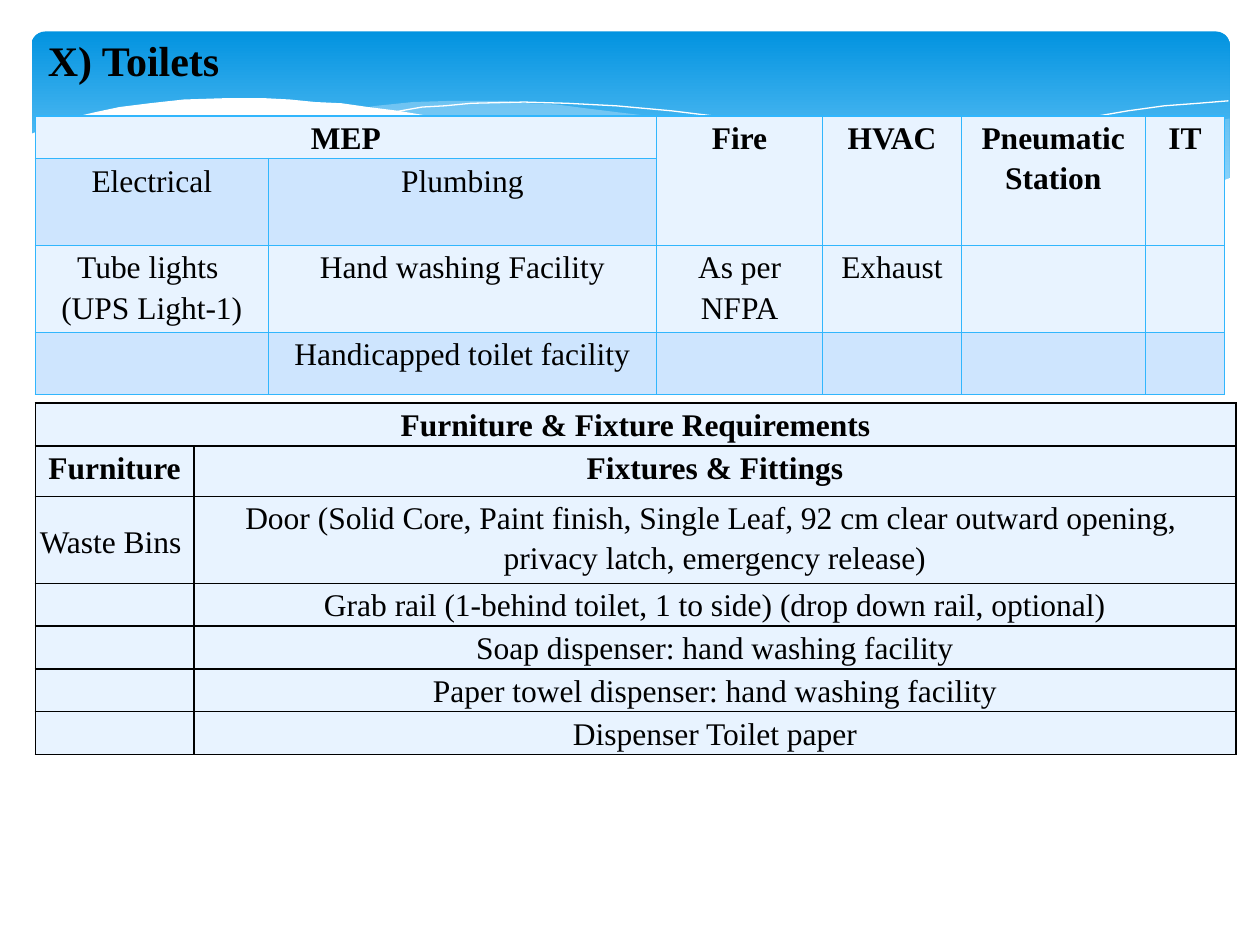
from lxml import etree
from pptx import Presentation
from pptx import util as u
from pptx.dml.color import RGBColor
from pptx.enum import shapes, text
from pptx.oxml.ns import qn

FONT = "Times New Roman"
TITLE_SIZE, TABLE_SIZE = 24, 18
PALE, SOFT, SKY = "E8F3FF", "CEE5FE", "31B6FD"
MIST, BLACK, WHITE = "C6E7FC", "000000", "FFFFFF"
BANNER_TOP, BANNER_BOTTOM = "0293E0", "83D3FE"

# Shared measures in inches
LEFT_EDGE = 0.28
CELL_MARGIN = 0.07
ONE_LINE, TWO_LINES = 0.34, 0.69

# Wave outlines as (x, y) in hundredths of an inch: the freeform builder keeps whole numbers
RIGHT_WAVE = [
    (976, 94), (948, 99), (921, 104), (891, 110), (861, 118), (805, 131), (753, 143),
    (706, 152), (661, 160), (691, 164), (732, 168), (769, 171), (803, 172), (835, 172),
    (863, 170), (897, 165), (928, 158), (949, 152), (976, 141)]
MIDDLE_WAVE = [
    (893, 167), (866, 164), (807, 154), (741, 142), (668, 126), (629, 116), (598, 109),
    (569, 102), (541, 97), (514, 92), (489, 89), (465, 86), (442, 83), (420, 82),
    (399, 80), (361, 80), (328, 81), (299, 84), (286, 86), (323, 90), (362, 97),
    (404, 106), (449, 116), (530, 135), (601, 150), (650, 158), (695, 165), (736, 169),
    (773, 172), (807, 173), (838, 172), (867, 170)]
FALLING_LINE = [
    (309, 90), (318, 88), (335, 85), (353, 84), (374, 82), (416, 81), (450, 82), (489, 84),
    (533, 88), (582, 94), (636, 103), (695, 114), (760, 128), (831, 145), (907, 166)]
RISING_LINE = [
    (613, 151), (653, 141), (695, 130), (748, 117), (806, 104), (836, 99), (866, 93),
    (895, 88), (924, 84), (951, 82), (975, 80)]
WHITE_WAVE = [
    (977, 141), (950, 151), (920, 159), (887, 166), (850, 170), (809, 171), (761, 170),
    (708, 165), (648, 156), (579, 144), (503, 128), (447, 114), (418, 107), (391, 102),
    (365, 96), (340, 92), (316, 88), (292, 85), (271, 82), (250, 81), (230, 79), (211, 78),
    (177, 78), (146, 79), (119, 82), (95, 85), (76, 89), (59, 93), (46, 98), (36, 102),
    (23, 107), (23, 224), (977, 224)]

SERVICES = [
    ["MEP", "", "Fire", "HVAC", "Pneumatic Station", "IT"],
    ["Electrical", "Plumbing", "", "", "", ""],
    ["Tube lights \n(UPS Light-1)", "Hand washing Facility", "As per NFPA", "Exhaust", "", ""],
    ["", "Handicapped toilet facility", "", "", "", ""]]
FIXTURES = [
    "Grab rail (1-behind toilet, 1 to side) (drop down rail, optional)",
    "Soap dispenser: hand washing facility",
    "Paper towel dispenser: hand washing facility",
    "Dispenser Toilet paper"]
FURNITURE = [
    ["Furniture & Fixture Requirements", ""],
    ["Furniture", "Fixtures & Fittings"],
    ["Waste Bins ", "Door (Solid Core, Paint finish, Single Leaf, 92 cm clear outward opening,"
     "  privacy latch, emergency release)"],
] + [["", fixture] for fixture in FIXTURES]


def color(code):
    return RGBColor.from_string(code)


def inches(*lengths):
    return [u.Inches(length) for length in lengths]


class Page:
    """The current slide and the style of its elements."""

    def __init__(self, deck):
        self.slide = deck.slides.add_slide(deck.slide_layouts[5])

    def format(self, para, size, bold, align):
        para.alignment = align
        for span in para.runs:
            span.font.name, span.font.size, span.font.bold = FONT, u.Pt(size), bold
            span.font.color.rgb = color(BLACK)

    def banner(self, *place):
        box = self.slide.shapes.add_shape(shapes.MSO_SHAPE.ROUNDED_RECTANGLE, *inches(*place))
        box.adjustments[0] = 0.07
        box.shadow.inherit = False
        box.line.fill.background()
        box.fill.gradient()
        box.fill.gradient_angle = 270  # counted counter-clockwise: runs from top to bottom
        stops = zip(box.fill.gradient_stops, (0, 0.9), (BANNER_TOP, BANNER_BOTTOM))
        for stop, position, code in stops:
            stop.position = position
            stop.color.rgb = color(code)

    def freeform(self, points, closed):
        builder = self.slide.shapes.build_freeform(*points[0], scale=u.Inches(0.01))
        builder.add_line_segments(points[1:], close=closed)
        outline = builder.convert_to_shape()
        outline.shadow.inherit = False
        return outline

    def wave(self, points, code, opacity):
        wave = self.freeform(points, closed=True)
        wave.line.fill.background()
        wave.fill.solid()
        wave.fill.fore_color.rgb = color(code)
        tint = wave._element.spPr.find(qn("a:solidFill")).find(qn("a:srgbClr"))
        etree.SubElement(tint, qn("a:alpha"), val=str(opacity * 1000))

    def hairline(self, points):
        curve = self.freeform(points, closed=False)
        curve.fill.background()
        curve.line.color.rgb = color(WHITE)
        curve.line.width = u.Pt(0)

    def title(self, words, *place):
        box = self.slide.shapes.title
        box.left, box.top, box.width, box.height = inches(*place)
        box.text_frame.text = words
        box.text_frame.vertical_anchor = text.MSO_ANCHOR.TOP
        self.format(box.text_frame.paragraphs[0], TITLE_SIZE, True, text.PP_ALIGN.LEFT)
        self.slide.shapes._spTree.append(box._element)  # in front of the waves

    def border(self, cell, code):
        props = cell._tc.get_or_add_tcPr()
        for index, side in enumerate(("a:lnL", "a:lnR", "a:lnT", "a:lnB")):
            line = etree.Element(qn(side), w=str(u.Pt(1)))
            fill = etree.SubElement(line, qn("a:solidFill"))
            etree.SubElement(fill, qn("a:srgbClr"), val=code)
            props.insert(index, line)  # borders come before the fill

    def cell(self, cell, words, fill, edge, bold):
        cell.margin_left = cell.margin_right = u.Inches(CELL_MARGIN)
        cell.margin_top = cell.margin_bottom = 0
        cell.fill.solid()
        cell.fill.fore_color.rgb = color(fill)
        self.border(cell, edge)
        if words:
            para = cell.text_frame.paragraphs[0]
            para.text = words
            para.line_spacing, para.space_after = 1.15, u.Pt(10)
            self.format(para, TABLE_SIZE, bold, text.PP_ALIGN.CENTER)

    def table(self, top, widths, heights, rows, fills, edge, bold_rows):
        """Fills repeat down the rows; the first bold_rows rows are bold."""
        place = inches(LEFT_EDGE, top, sum(widths), sum(heights))
        grid = self.slide.shapes.add_table(len(rows), len(widths), *place).table
        grid.first_row = grid.horz_banding = False
        for column, width in zip(grid.columns, widths):
            column.width = u.Inches(width)
        for row, height in zip(grid.rows, heights):
            row.height = u.Inches(height)
        for r, row in enumerate(rows):
            for c, words in enumerate(row):
                self.cell(grid.cell(r, c), words, fills[r % len(fills)], edge, r < bold_rows)
        grid.cell(0, 0).merge(grid.cell(0, 1))  # heading over the first two columns
        return grid


def main():
    deck = Presentation()
    deck.slide_width, deck.slide_height = inches(10, 7.5)
    page = Page(deck)

    # Banner and its waves, from back to front
    page.banner(0.25, 0.25, 9.51, 1.56)
    page.wave(RIGHT_WAVE, MIST, opacity=29)
    page.wave(MIDDLE_WAVE, MIST, opacity=40)
    for curve in (FALLING_LINE, RISING_LINE):
        page.hairline(curve)
    page.wave(WHITE_WAVE, WHITE, opacity=100)
    page.title("X) Toilets", LEFT_EDGE, 0.22, 4.96, 0.5)

    # Building services: single headings span both heading rows
    services = page.table(
        top=0.92, widths=[1.85, 3.08, 1.32, 1.1, 1.46, 0.63],
        heights=[ONE_LINE, TWO_LINES, TWO_LINES, 0.49],
        rows=SERVICES, fills=[PALE, SOFT], edge=SKY, bold_rows=1)
    for column in range(2, len(SERVICES[0])):
        services.cell(0, column).merge(services.cell(1, column))

    # Furniture and fixtures
    furniture = page.table(
        top=3.2, widths=[1.26, 8.27],
        heights=[ONE_LINE, 0.4, TWO_LINES] + [ONE_LINE] * len(FIXTURES),
        rows=FURNITURE, fills=[PALE], edge=BLACK, bold_rows=2)
    waste_bins = furniture.cell(2, 0)
    waste_bins.margin_left = waste_bins.margin_right = 0
    waste_bins.vertical_anchor = text.MSO_ANCHOR.MIDDLE

    deck.save("out.pptx")


if __name__ == "__main__":
    main()
